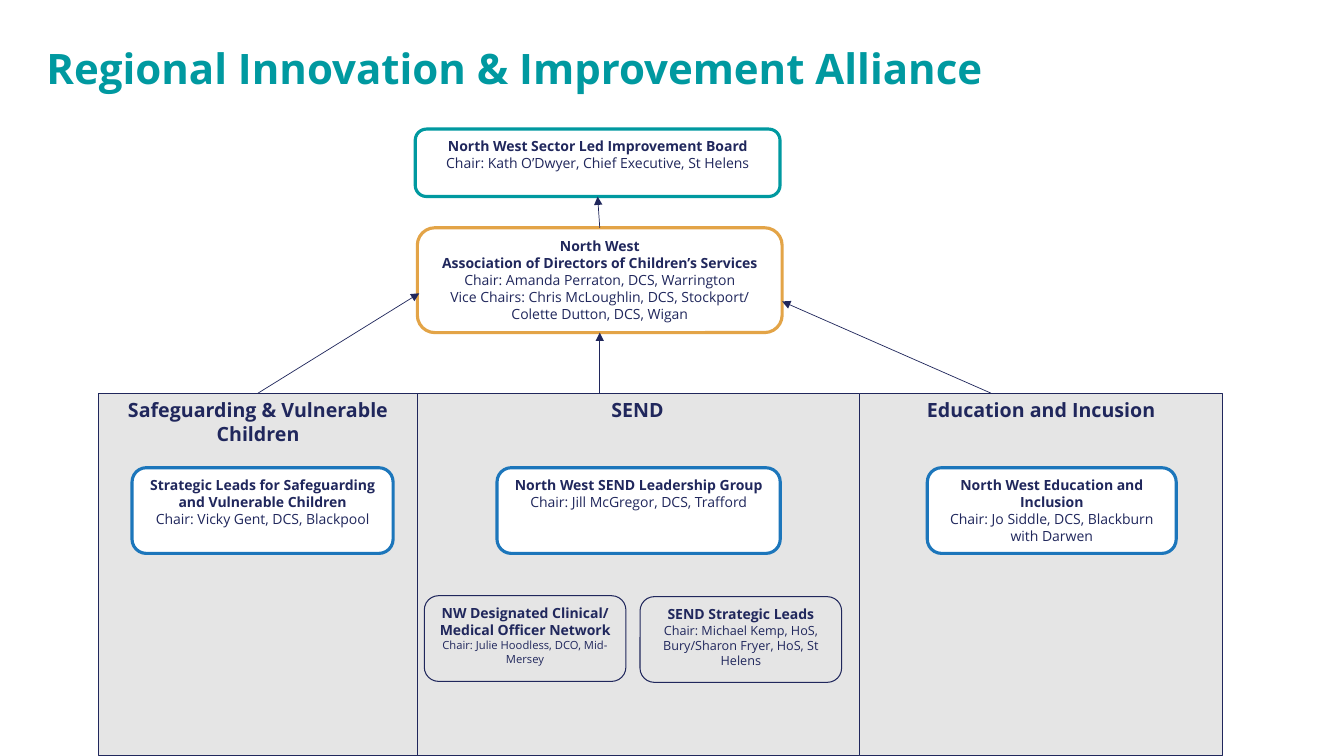
from dataclasses import dataclass

from lxml.etree import SubElement
from pptx import Presentation
from pptx.dml.color import RGBColor
from pptx.enum.shapes import MSO_CONNECTOR, MSO_SHAPE
from pptx.enum.text import MSO_ANCHOR, PP_ALIGN
from pptx.oxml.ns import qn
from pptx.util import Pt


@dataclass(frozen=True)
class Theme:
    font: str = "Open Sans"
    navy: str = "20275C"
    teal: str = "0099A0"
    amber: str = "E3A447"
    blue: str = "1C76BB"
    grey: str = "E5E5E5"
    white: str = "FFFFFF"
    title: float = 30
    heading: float = 14
    body: float = 10
    small: float = 9
    tiny: float = 8
    thick: float = 2.25
    thin: float = 0.75
    arrow: float = 0.5


@dataclass(frozen=True)
class Box:
    key: str
    left: float
    top: float
    width: float
    height: float
    heads: tuple[str, ...]
    chairs: tuple[str, ...] = ()
    fill: str = Theme.white
    line: str = Theme.blue
    weight: float = Theme.thick
    head_size: float = Theme.body
    chair_size: float = Theme.body
    kind: MSO_SHAPE = MSO_SHAPE.ROUNDED_RECTANGLE


@dataclass(frozen=True)
class Arrow:
    """An arrow; a join is (box key, connection site)."""
    start: tuple[float, float]
    end: tuple[float, float]
    start_join: tuple[str, int] | None = None
    end_join: tuple[str, int] | None = None


T = Theme()
TOP, LEFT, BOTTOM, RIGHT = range(4)
COLUMN_TOP, COLUMN_H = 280.8, 259.2
LEAD_TOP, LEAD_H = 334.1, 61.2
NETWORK_W = 144


def column(key: str, left: float, width: float, heading: str) -> Box:
    return Box(key, left, COLUMN_TOP, width, COLUMN_H, (heading,), fill=T.grey, line=T.navy,
               weight=T.thin, head_size=T.heading, kind=MSO_SHAPE.RECTANGLE)


def lead(key: str, left: float, width: float, head: str, chair: str) -> Box:
    return Box(key, left, LEAD_TOP, width, LEAD_H, (head,), (chair,))


def network(key: str, left: float, top: float, head: str, chair: str, size: float) -> Box:
    return Box(key, left, top, NETWORK_W, LEAD_H, (head,), (chair,), fill=T.grey,
               line=T.navy, weight=T.thin, chair_size=size)


BOXES = [
    column("education", 614.2, 259.2, "Education and Incusion"),
    column("send", 296.6, 317.6, "SEND"),
    column("safeguarding", 70.6, 227.5, "Safeguarding & Vulnerable Children"),
    Box("directors", 298.1, 162.7, 260.6, 74.9,
        ("North West", "Association of Directors of Children’s Services"),
        ("Chair: Amanda Perraton, DCS, Warrington",
         "Vice Chairs: Chris McLoughlin, DCS, Stockport/",
         "Colette Dutton, DCS, Wigan"), line=T.amber),
    lead("send lead", 355, 202.3, "North West SEND Leadership Group",
         "Chair: Jill McGregor, DCS, Trafford"),
    network("strategic", 457.2, 426.2, "SEND Strategic Leads",
            "Chair: Michael Kemp, HoS, Bury/Sharon Fryer, HoS, St Helens", T.small),
    Box("board", 296.6, 92.2, 260.6, 48.2, ("North West Sector Led Improvement Board",),
        ("Chair: Kath O’Dwyer, Chief Executive, St Helens",), line=T.teal),
    lead("safeguarding lead", 94.3, 186.5,
         "Strategic Leads for Safeguarding and Vulnerable Children",
         "Chair: Vicky Gent, DCS, Blackpool"),
    lead("education lead", 662.4, 177.8, "North West Education and Inclusion",
         "Chair: Jo Siddle, DCS, Blackburn with Darwen"),
    network("clinical", 303.1, 425.5, "NW Designated Clinical/ Medical Officer Network",
            "Chair: Julie Hoodless, DCO, Mid-Mersey", T.tiny),
]

ARROWS = [
    Arrow((428.4, COLUMN_TOP), (428.4, 237.6), end_join=("directors", BOTTOM)),
    Arrow((707.8, COLUMN_TOP), (558.7, 215.3)),
    Arrow((184.3, COLUMN_TOP), (299.5, 209.5), start_join=("safeguarding", TOP)),
    Arrow((428.4, 162.7), (426.9, 140.4), ("directors", TOP), ("board", BOTTOM)),
]


def style_run(r, size: float, bold: bool, color: str) -> None:
    for name, value in {"name": T.font, "size": Pt(size), "bold": bold}.items():
        setattr(r.font, name, value)
    r.font.color.rgb = RGBColor.from_string(color)


def draw_box(s, box: Box):
    sp = s.shapes.add_shape(box.kind, Pt(box.left), Pt(box.top), Pt(box.width), Pt(box.height))
    sp.shadow.inherit = False
    sp.fill.solid()
    sp.fill.fore_color.rgb = RGBColor.from_string(box.fill)
    sp.line.color.rgb = RGBColor.from_string(box.line)
    sp.line.width = Pt(box.weight)
    tf = sp.text_frame
    tf.word_wrap = True
    tf.vertical_anchor = MSO_ANCHOR.TOP
    lines = [(text, box.head_size, True) for text in box.heads]
    lines += [(text, box.chair_size, False) for text in box.chairs]
    for i, (text, size, bold) in enumerate(lines):
        p = tf.add_paragraph() if i else tf.paragraphs[0]
        p.alignment = PP_ALIGN.CENTER
        r = p.add_run()
        r.text = text
        style_run(r, size, bold, T.navy)
    return sp


def draw_arrow(s, arrow: Arrow, shapes: dict) -> None:
    cx = s.shapes.add_connector(MSO_CONNECTOR.STRAIGHT, *map(Pt, arrow.start + arrow.end))
    if arrow.start_join:
        key, site = arrow.start_join
        cx.begin_connect(shapes[key], site)
    if arrow.end_join:
        key, site = arrow.end_join
        cx.end_connect(shapes[key], site)
    cx.line.color.rgb = RGBColor.from_string(T.navy)
    cx.line.width = Pt(T.arrow)
    SubElement(cx.line._get_or_add_ln(), qn("a:tailEnd"), type="triangle")
    SubElement(cx._element.spPr, qn("a:effectLst"))


def draw_title(s, text: str) -> None:
    sp = s.shapes.title
    place = {"left": 25.9, "top": 26.6, "width": 733, "height": 43.9}
    for name, value in place.items():
        setattr(sp, name, Pt(value))
    tf = sp.text_frame
    tf.word_wrap = True
    tf.vertical_anchor = MSO_ANCHOR.MIDDLE
    p = tf.paragraphs[0]
    p.alignment = PP_ALIGN.LEFT
    r = p.add_run()
    r.text = text
    style_run(r, T.title, True, T.teal)


def main() -> None:
    prs = Presentation()
    prs.slide_width, prs.slide_height = Pt(960), Pt(540)
    s = prs.slides.add_slide(prs.slide_layouts[5])
    draw_title(s, "Regional Innovation & Improvement Alliance")
    shapes = {box.key: draw_box(s, box) for box in BOXES}
    for arrow in ARROWS:
        draw_arrow(s, arrow, shapes)
    prs.save("out.pptx")


if __name__ == "__main__":
    main()
